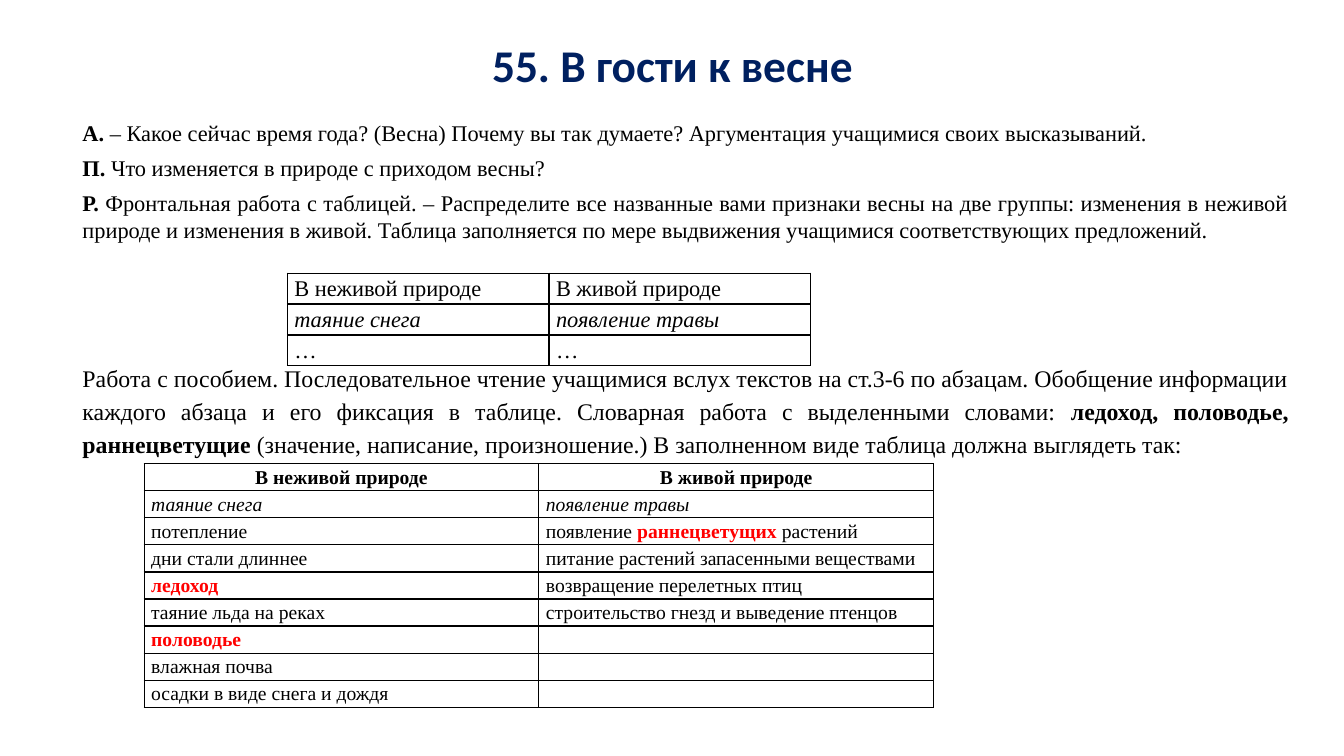
from lxml import etree
from pptx import Presentation
from pptx.dml.color import RGBColor
from pptx.enum.text import MSO_ANCHOR, PP_ALIGN
from pptx.oxml.ns import qn
from pptx.util import Inches, Pt

CENTER, JUSTIFY, LEFT = PP_ALIGN.CENTER, PP_ALIGN.JUSTIFY, PP_ALIGN.LEFT
MIDDLE = MSO_ANCHOR.MIDDLE
TITLE_ONLY = 5
SERIF = "Times New Roman"
BLACK, RED, NAVY = "000000", "FF0000", "002060"

PLAIN = {"bold": False, "italic": False, "color": BLACK}
BOLD = PLAIN | {"bold": True}
ITALIC = PLAIN | {"italic": True}
KEYWORD = BOLD | {"color": RED}

QUESTIONS = [
    ("А. ", "– Какое сейчас время года? (Весна) Почему вы так думаете? "
            "Аргументация учащимися своих высказываний."),
    ("П. ", "Что изменяется в природе с приходом весны?"),
    ("Р. ", "Фронтальная работа с таблицей. – Распределите все названные вами признаки весны "
            "на две группы: изменения в неживой природе и изменения в живой. "
            "Таблица заполняется по мере выдвижения учащимися соответствующих предложений."),
]
READING = [
    ("Работа с пособием. Последовательное чтение учащимися вслух текстов на ст.3-6 по абзацам. "
     "Обобщение информации каждого абзаца и его фиксация в таблице. "
     "Словарная работа с выделенными словами: ", PLAIN),
    ("ледоход, половодье, раннецветущие", BOLD),
    (" (значение, написание, произношение.) В заполненном виде таблица должна выглядеть так:", PLAIN),
]
HEADINGS = ["В неживой природе", "В живой природе"]
EXAMPLES = [[("таяние снега", ITALIC)], [("появление травы", ITALIC)]]
STARTED_ROWS = [
    [[(heading, PLAIN)] for heading in HEADINGS],
    EXAMPLES,
    [[("…", PLAIN)], [("…", PLAIN)]],
]
FILLED_ROWS = [
    [[(heading, BOLD)] for heading in HEADINGS],
    EXAMPLES,
    [[("потепление", PLAIN)],
     [("появление ", PLAIN), ("раннецветущих", KEYWORD), (" растений", PLAIN)]],
    [[("дни стали длиннее", PLAIN)], [("питание растений запасенными веществами", PLAIN)]],
    [[("ледоход", KEYWORD)], [("возвращение перелетных птиц", PLAIN)]],
    [[("таяние льда на реках", PLAIN)], [("строительство гнезд и выведение птенцов", PLAIN)]],
    [[("половодье", KEYWORD)], []],
    [[("влажная почва", PLAIN)], []],
    [[("осадки в виде снега и дождя", PLAIN)], []],
]


def rgb(code):
    return RGBColor.from_string(code)


def set_values(target, values):
    for name, value in values.items():
        setattr(target, name, value)


def write_runs(paragraph, runs, size, layout, face=SERIF):
    set_values(paragraph, layout)
    set_values(paragraph.font, {"size": Pt(size), "name": face})
    for text, style in runs:
        run = paragraph.add_run()
        run.text = text
        set_values(run.font, {"size": Pt(size), "name": face,
                              "bold": style["bold"], "italic": style["italic"]})
        run.font.color.rgb = rgb(style["color"])


def add_title(slide, box):
    title = slide.shapes.title
    set_values(title, dict(zip(("left", "top", "width", "height"), map(Inches, box))))
    title.text_frame.vertical_anchor = MIDDLE
    write_runs(title.text_frame.paragraphs[0], [("55. В гости к весне", BOLD | {"color": NAVY})],
               32.4, {"alignment": CENTER, "line_spacing": 0.9}, "Calibri")


def add_lesson_plan(slide, box):
    plan = slide.shapes.add_textbox(*map(Inches, box)).text_frame
    plan.word_wrap = True
    paragraph = plan.paragraphs[0]
    for letter, question in QUESTIONS:
        write_runs(paragraph, [(letter, BOLD), (question, PLAIN)], 16,
                   {"alignment": JUSTIFY, "space_after": Pt(6)})
        paragraph = plan.add_paragraph()
    write_runs(paragraph, READING, 17, {"alignment": JUSTIFY, "line_spacing": 1.15,
                                        "space_before": Pt(77), "space_after": Pt(10)})


def add_borders(cell):
    properties = cell._tc.get_or_add_tcPr()
    for position, side in enumerate(("a:lnL", "a:lnR", "a:lnT", "a:lnB")):
        line = etree.Element(qn(side), w=str(Pt(1)))
        fill = etree.SubElement(line, qn("a:solidFill"))
        etree.SubElement(fill, qn("a:srgbClr"), val=BLACK)
        properties.insert(position, line)


def add_nature_table(slide, box, rows, size, heading_align, entry_align):
    table = slide.shapes.add_table(len(rows), len(HEADINGS), *map(Inches, box)).table
    set_values(table, {"first_row": False, "horz_banding": False})
    for row_index, row in enumerate(rows):
        for column_index, runs in enumerate(row):
            cell = table.cell(row_index, column_index)
            set_values(cell, {"margin_left": Inches(0.07), "margin_right": Inches(0.07),
                              "margin_top": 0, "margin_bottom": 0})
            cell.fill.background()
            add_borders(cell)
            write_runs(cell.text_frame.paragraphs[0], runs, size,
                       {"alignment": entry_align if row_index else heading_align,
                        "line_spacing": 1.15, "space_after": Pt(10)})


def main():
    presentation = Presentation()
    set_values(presentation, {"slide_width": Inches(13.33), "slide_height": Inches(7.5)})
    slide = presentation.slides.add_slide(presentation.slide_layouts[TITLE_ONLY])
    add_title(slide, (0.92, 0.4, 11.5, 0.55))
    add_lesson_plan(slide, (0.72, 1.13, 12.16, 5.9))
    add_nature_table(slide, (2.85, 2.71, 5.19, 0.86), STARTED_ROWS, 16, JUSTIFY, JUSTIFY)
    add_nature_table(slide, (1.43, 4.6, 7.83, 2.26), FILLED_ROWS, 14, CENTER, LEFT)
    presentation.save("out.pptx")


if __name__ == "__main__":
    main()
